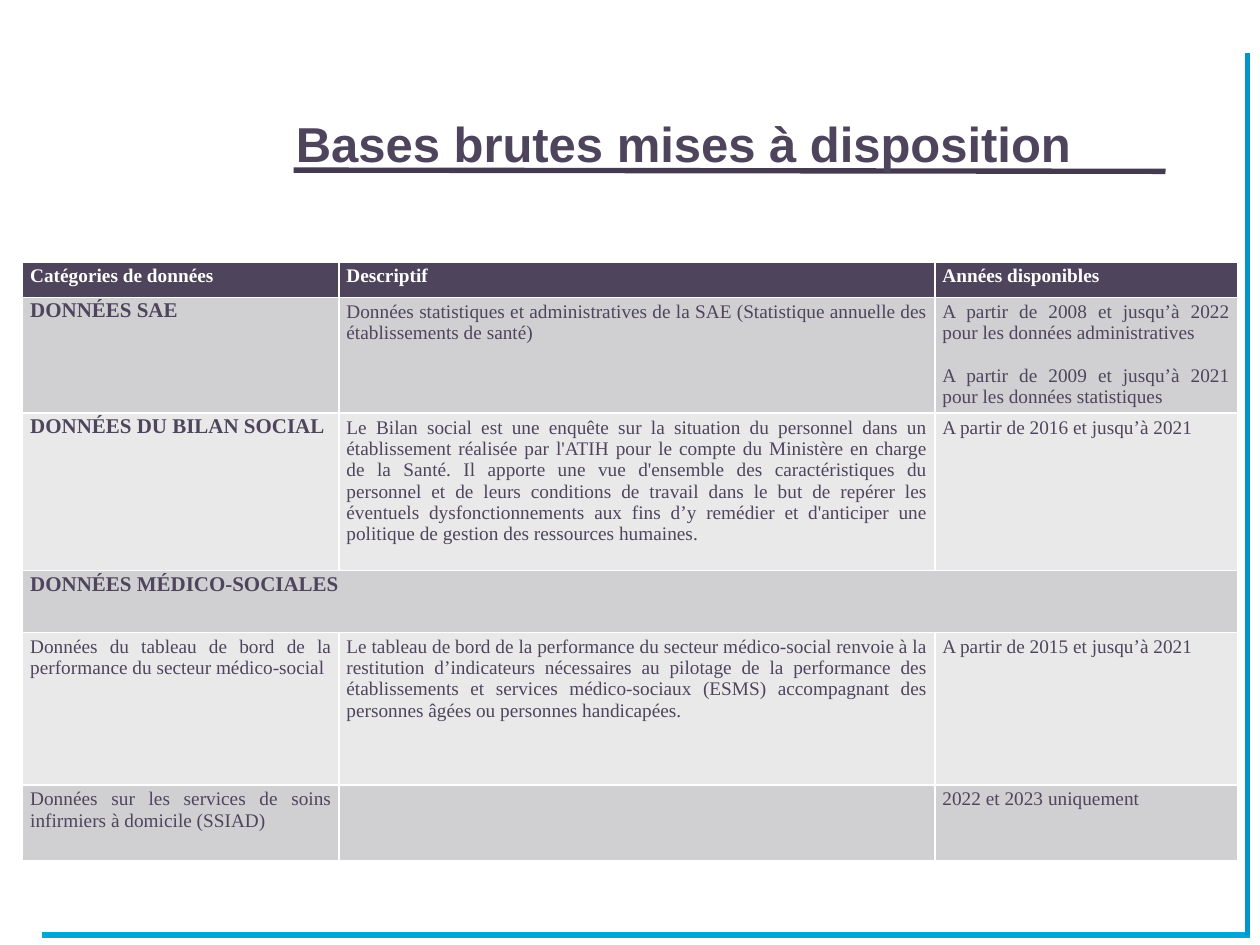
"""Build the slide listing the raw databases made available."""
import pptx
import pptx.util
import pptx.dml.color
import pptx.enum.shapes
import pptx.enum.text
import pptx.oxml.ns
from lxml import etree

Inches = pptx.util.Inches
Pt = pptx.util.Pt
COLORS = {
    "plum": "4E455D",
    "underline": "453B50",
    "cyan": "02A7D5",
    "blue": "0095CB",
    "white": "FFFFFF",
    "dark_band": "D0CFD2",
    "light_band": "E9E9EA",
}


def color(name):
    return pptx.dml.color.RGBColor.from_string(COLORS[name])


def style_text(paragraph, font_name, size, color_name, bold):
    for span in paragraph.runs:
        span.font.name = font_name
        span.font.size = Pt(size)
        span.font.bold = bold
        span.font.color.rgb = color(color_name)


deck = pptx.Presentation()
deck.slide_width = Inches(10)
deck.slide_height = Inches(7.5)
page = deck.slides.add_slide(deck.slide_layouts[6])

rules = [
    (2.33, 1.35, 9.25, 1.36, "underline"),
    (0.33, 7.42, 9.92, 7.42, "cyan"),
    (9.9, 7.42, 9.9, 0.42, "blue"),
]
for *ends, color_name in rules:
    rule = page.shapes.add_connector(
        pptx.enum.shapes.MSO_CONNECTOR.STRAIGHT, *[Inches(end) for end in ends]
    )
    rule.line.color.rgb = color(color_name)
    rule.line.width = Pt(3.06)
    properties = rule._element.spPr
    etree.SubElement(properties, pptx.oxml.ns.qn("a:effectLst"))

title = page.shapes.add_textbox(Inches(2.25), Inches(0.33), Inches(6.67), Inches(1.09))
title.text_frame.word_wrap = True
title.text_frame.vertical_anchor = pptx.enum.text.MSO_ANCHOR.BOTTOM
title.text_frame.text = "Bases brutes mises à disposition"
style_text(title.text_frame.paragraphs[0], "Arial", 28, "plum", True)

column_widths = [2.51, 4.73, 2.4]
row_heights = [0.28, 0.92, 1.25, 0.49, 1.21, 0.6]
rows = [
    ["Catégories de données", "Descriptif", "Années disponibles"],
    [
        "DONNÉES SAE",
        "Données statistiques et administratives de la SAE (Statistique annuelle des "
        "établissements de santé)",
        "A partir de 2008 et jusqu’à 2022 pour les données administratives\n"
        "A partir de 2009 et jusqu’à 2021 pour les données statistiques",
    ],
    [
        "DONNÉES DU BILAN SOCIAL",
        "Le Bilan social est une enquête sur la situation du personnel dans un "
        "établissement réalisée par l'ATIH pour le compte du Ministère en charge de la "
        "Santé. Il apporte une vue d'ensemble des caractéristiques du personnel et de "
        "leurs conditions de travail dans le but de repérer les éventuels "
        "dysfonctionnements aux fins d’y remédier et d'anticiper une politique de "
        "gestion des ressources humaines.",
        "A partir de 2016 et jusqu’à 2021",
    ],
    ["DONNÉES MÉDICO-SOCIALES", "", ""],
    [
        "Données du tableau de bord de la performance du secteur médico-social",
        "Le tableau de bord de la performance du secteur médico-social renvoie à la "
        "restitution d’indicateurs nécessaires au pilotage de la performance des "
        "établissements et services médico-sociaux (ESMS) accompagnant des personnes "
        "âgées ou personnes handicapées.",
        "A partir de 2015 et jusqu’à 2021",
    ],
    [
        "Données sur les services de soins infirmiers à domicile (SSIAD)",
        "",
        "2022 et 2023 uniquement",
    ],
]

table = page.shapes.add_table(
    len(rows), len(column_widths), Inches(0.18), Inches(2.08),
    Inches(sum(column_widths)), Inches(sum(row_heights)),
).table
for column, width in zip(table.columns, column_widths):
    column.width = Inches(width)
for row, height in zip(table.rows, row_heights):
    row.height = Inches(height)
table.cell(3, 0).merge(table.cell(3, 2))

for row_index, texts in enumerate(rows):
    is_header = row_index == 0
    band = "plum" if is_header else "dark_band" if row_index % 2 else "light_band"
    for column_index, text in enumerate(texts):
        cell = table.cell(row_index, column_index)
        cell.fill.solid()
        cell.fill.fore_color.rgb = color(band)
        cell.margin_left = cell.margin_right = Inches(0.06)
        cell.margin_top = cell.margin_bottom = Inches(0.03)
        if not text:
            continue
        is_category = text.startswith("DONNÉES")
        cell.text_frame.text = text
        for index, para in enumerate(cell.text_frame.paragraphs):
            para.alignment = pptx.enum.text.PP_ALIGN.JUSTIFY
            para.line_spacing = Pt(12.2)
            if index:
                para.space_before = Pt(12.2)
            style_text(
                para, "Times New Roman", 12 if is_category else 11,
                "white" if is_header else "plum", is_header or is_category,
            )

deck.save("out.pptx")
